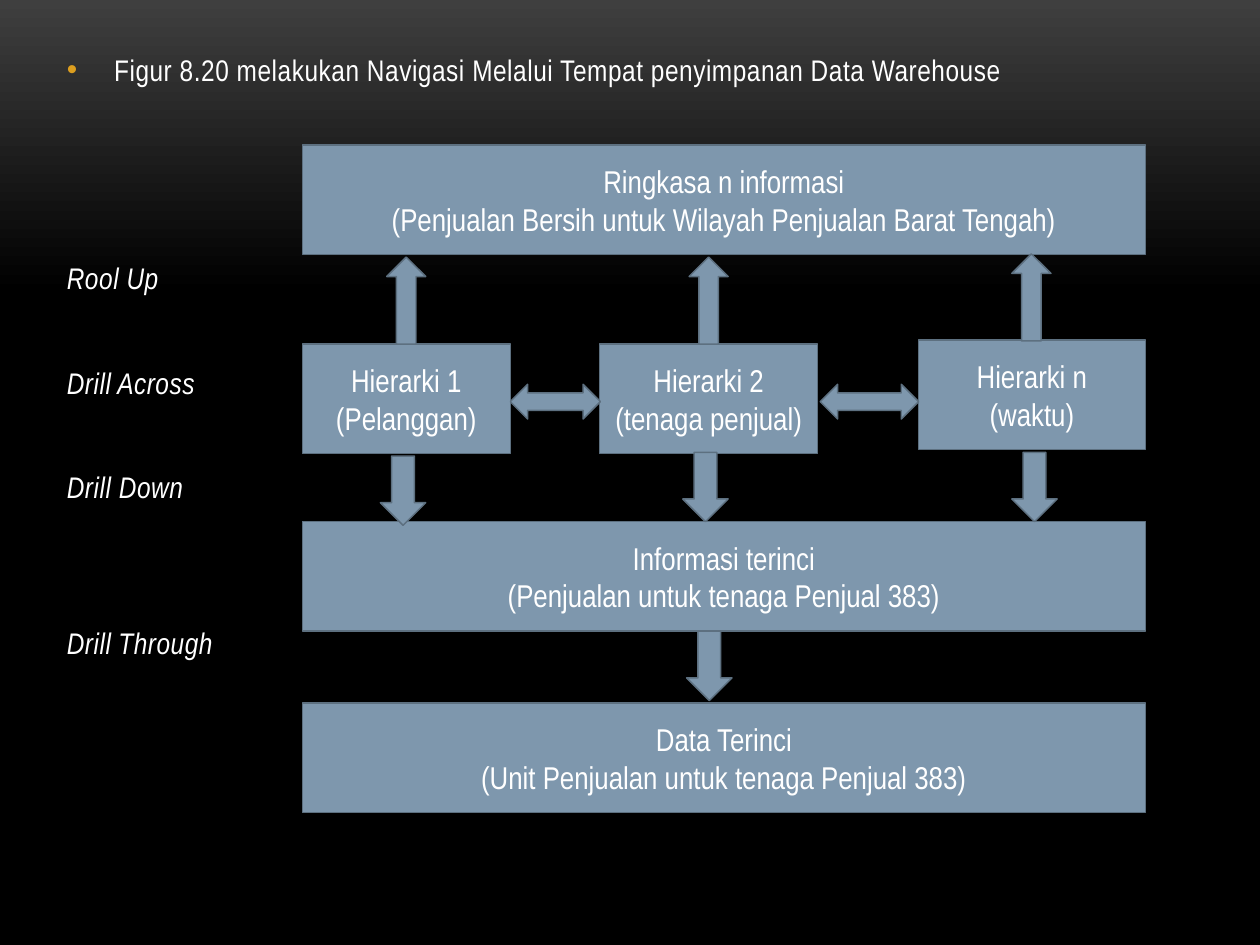
from lxml.etree import SubElement
from pptx import Presentation
from pptx.dml.color import RGBColor
from pptx.enum.shapes import MSO_SHAPE as Preset
from pptx.enum.text import MSO_ANCHOR as Anchor, MSO_AUTO_SIZE as AutoSize, PP_ALIGN as Align
from pptx.oxml.ns import qn
from pptx.util import Pt

COLORS = {"glow": "3F3F3F", "black": "000000", "steel": "7E97AD",
          "edge": "5D7080", "text": "FFFFFF", "bullet": "DC9E1F"}
FONT = "Arial Narrow"

HEADING = "Figur 8.20 melakukan Navigasi Melalui Tempat penyimpanan Data Warehouse"
# Each label with the number of list rows it stands below the entry before it
LABELS = [("Rool Up", 4), ("Drill Across", 2), ("Drill Down", 2), ("Drill Through", 3)]
ROW_PITCH, LINE_HEIGHT, SPACE_AFTER = 29.8, 20.5, 6
HEADING_INDENT = 27

BOX_HEIGHT = 62.6
WIDE_LEFT, WIDE_WIDTH = 172.8, 481.7
WIDE_BOXES = [
    (82.8, "Ringkasa n informasi\n(Penjualan Bersih untuk Wilayah Penjualan Barat Tengah)"),
    (298.1, "Informasi terinci\n(Penjualan untuk tenaga Penjual 383)"),
    (401.8, "Data Terinci\n(Unit Penjualan untuk tenaga Penjual 383)"),
]
HIERARCHIES = [  # left, top, width, text
    (172.8, 196.6, 118.8, "Hierarki 1\n(Pelanggan)"),
    (342.7, 196.6, 124.6, "Hierarki 2\n(tenaga penjual)"),
    (524.9, 194.4, 129.6, "Hierarki n\n(waktu)"),
]
UP_SIZE, DOWN_SIZE = (22.3, 49.7), (25.9, 39.6)
ROLL_UPS = [(221, 146.9), (393.8, 146.9), (578.2, 145.1)]
DRILL_DOWNS = [(217.4, 260.6), (390.2, 258.5), (578.2, 258.5), (392.4, 360.7)]
DRILL_ACROSS = [(291.6, 51.5), (468.7, 56.2)]  # left, width


def rgb(name):
    return RGBColor.from_string(COLORS[name])


def paint_background(slide):
    fill = slide.background.fill
    fill.gradient()
    fill.gradient_angle = 270
    for stop, position, name in zip(fill.gradient_stops, (0, 0.31), ("glow", "black")):
        stop.position = position
        stop.color.rgb = rgb(name)


def set_bullet(paragraph, indent):
    """Give the paragraph a coloured hanging bullet, or none if indent is 0."""
    props = paragraph._p.get_or_add_pPr()
    props.set("marL", str(Pt(indent)))
    props.set("indent", str(-Pt(indent)))
    if indent:
        color = SubElement(props, qn("a:buClr"))
        SubElement(color, qn("a:srgbClr"), val=COLORS["bullet"])
        SubElement(props, qn("a:buChar"), char="•")
    else:
        SubElement(props, qn("a:buNone"))


def format_runs(paragraph, size, italic=False, spacing=0):
    for run in paragraph.runs:
        run.font.name = FONT
        run.font.size = Pt(size)
        run.font.italic = italic
        run.font.color.rgb = rgb("text")
        if spacing:
            run.font._element.set("spc", str(spacing))


def fill_body(body):
    """Write the heading and the operation labels down the left side."""
    body.left, body.top, body.width, body.height = Pt(31), Pt(25.9), Pt(657.4), Pt(487.4)
    frame = body.text_frame
    frame.word_wrap = True
    frame.auto_size = AutoSize.NONE
    frame.vertical_anchor = Anchor.TOP
    heading = frame.paragraphs[0]
    heading.text = HEADING
    heading.space_before = Pt(0)
    heading.space_after = Pt(SPACE_AFTER)
    set_bullet(heading, HEADING_INDENT)
    format_runs(heading, 17, spacing=30)
    for text, rows in LABELS:
        label = frame.add_paragraph()
        label.text = text
        label.space_before = Pt(round(rows * ROW_PITCH - LINE_HEIGHT - SPACE_AFTER, 1))
        label.space_after = Pt(SPACE_AFTER)
        set_bullet(label, 0)
        format_runs(label, 17, italic=True, spacing=30)


def add_block(slide, preset, left, top, width, height):
    block = slide.shapes.add_shape(preset, Pt(left), Pt(top), Pt(width), Pt(height))
    block.shadow.inherit = False
    block.fill.solid()
    block.fill.fore_color.rgb = rgb("steel")
    block.line.color.rgb = rgb("edge")
    block.line.width = Pt(0.85)
    return block


def add_box(slide, left, top, width, text):
    frame = add_block(slide, Preset.RECTANGLE, left, top, width, BOX_HEIGHT).text_frame
    frame.word_wrap = True
    frame.vertical_anchor = Anchor.MIDDLE
    frame.text = text
    for paragraph in frame.paragraphs:
        paragraph.alignment = Align.CENTER
        format_runs(paragraph, 18)


def main():
    deck = Presentation()
    deck.slide_width, deck.slide_height = Pt(720), Pt(540)
    slide = deck.slides.add_slide(deck.slide_layouts[1])
    paint_background(slide)
    title = slide.shapes.title
    title._element.getparent().remove(title._element)
    fill_body(slide.placeholders[1])

    for top, text in WIDE_BOXES:
        add_box(slide, WIDE_LEFT, top, WIDE_WIDTH, text)
    for left, top, width, text in HIERARCHIES:
        add_box(slide, left, top, width, text)

    for left, width in DRILL_ACROSS:
        add_block(slide, Preset.LEFT_RIGHT_ARROW, left, 219.6, width, 19.8)
    for left, top in ROLL_UPS:
        add_block(slide, Preset.UP_ARROW, left, top, *UP_SIZE)
    for left, top in DRILL_DOWNS:
        add_block(slide, Preset.DOWN_ARROW, left, top, *DOWN_SIZE)

    deck.save("out.pptx")


if __name__ == "__main__":
    main()
